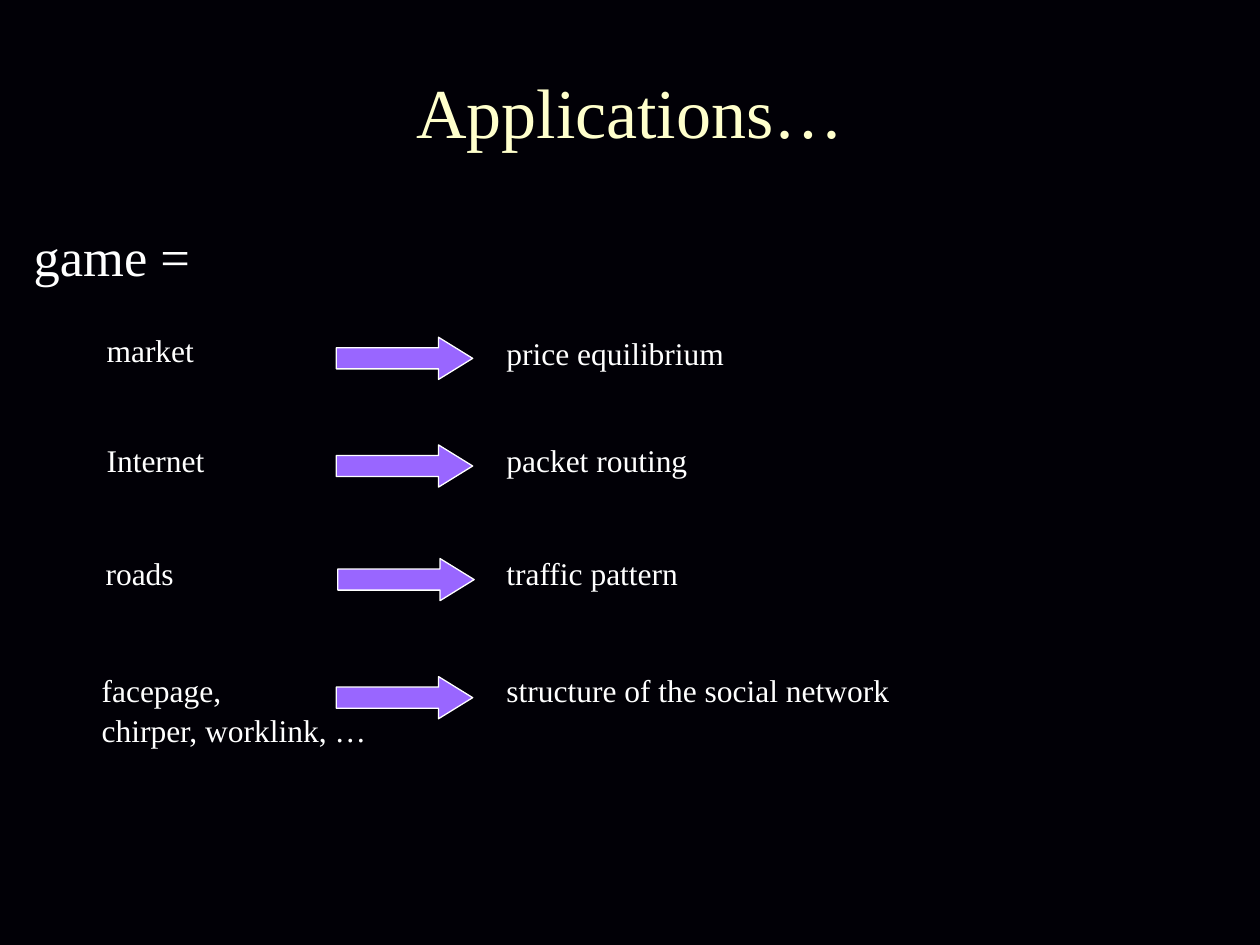
import pptx
import pptx.dml.color
import pptx.enum.shapes
import pptx.enum.text
import pptx.util

Cm = pptx.util.Cm
Pt = pptx.util.Pt
RGBColor = pptx.dml.color.RGBColor

BACKGROUND = RGBColor(0x01, 0x00, 0x06)
TITLE_COLOR = RGBColor(0xFF, 0xFF, 0xCC)
TEXT_COLOR = RGBColor(0xFF, 0xFF, 0xFF)
ARROW_COLOR = RGBColor(0x99, 0x66, 0xFF)
FONT_NAME = "Times New Roman"

APPLICATIONS = [
    {"top": 6.55, "label_left": 1.9, "label_size": (4.88, 1.8), "arrow": (6.78, 0.25),
     "label": ["market"], "outcome": "price equilibrium", "outcome_drop": 0.05, "outcome_width": 7.42},
    {"top": 8.76, "label_left": 1.9, "label_size": (4.65, 2.31), "arrow": (6.78, 0.21),
     "label": ["Internet"], "outcome": "packet routing", "outcome_drop": 0, "outcome_width": 13.13},
    {"top": 11.05, "label_left": 1.88, "label_size": (4.01, 1.8), "arrow": (6.81, 0.21),
     "label": ["roads"], "outcome": "traffic pattern", "outcome_drop": 0, "outcome_width": 15.44},
    {"top": 13.41, "label_left": 1.8, "label_size": (6.55, 2.57), "arrow": (6.78, 0.23),
     "label": ["facepage,", "chirper, worklink, …"], "outcome": "structure of the social network",
     "outcome_drop": 0, "outcome_width": 14.17},
]


def apply_format(target, values):
    for name, value in values.items():
        setattr(target, name, value)


def write_lines(text_frame, lines, size, color):
    text_frame.word_wrap = True
    text_frame.text = "\n".join(lines)
    for paragraph in text_frame.paragraphs:
        paragraph.space_after = Pt(1)
        apply_format(paragraph.font, {"name": FONT_NAME, "size": Pt(size)})
        paragraph.font.color.rgb = color


def add_text(slide, left, top, width, height, lines, size=18):
    textbox = slide.shapes.add_textbox(Cm(left), Cm(top), Cm(width), Cm(height))
    write_lines(textbox.text_frame, lines, size, TEXT_COLOR)


def add_title(slide, left, top, width, height):
    title = slide.shapes.title
    apply_format(title, {"left": Cm(left), "top": Cm(top), "width": Cm(width), "height": Cm(height)})
    write_lines(title.text_frame, ["Applications…"], 40, TITLE_COLOR)
    title.text_frame.vertical_anchor = pptx.enum.text.MSO_ANCHOR.MIDDLE
    title.text_frame.paragraphs[0].alignment = pptx.enum.text.PP_ALIGN.CENTER


def add_arrow(slide, left, top, width, height):
    arrow = slide.shapes.add_shape(
        pptx.enum.shapes.MSO_SHAPE.RIGHT_ARROW, Cm(left), Cm(top), Cm(width), Cm(height))
    arrow.adjustments[0] = 0.5
    arrow.adjustments[1] = 0.81
    arrow.shadow.inherit = False
    arrow.fill.solid()
    arrow.fill.fore_color.rgb = ARROW_COLOR
    arrow.line.color.rgb = TEXT_COLOR
    arrow.line.width = Pt(0.75)


def add_application(slide, row):
    top = row["top"]
    arrow_left, arrow_drop = row["arrow"]
    add_text(slide, row["label_left"], top, *row["label_size"], row["label"])
    add_arrow(slide, arrow_left, top + arrow_drop, 2.75, 0.85)
    add_text(slide, 9.96, top + row["outcome_drop"], row["outcome_width"], 1.8, [row["outcome"]])


def main():
    presentation = pptx.Presentation()
    apply_format(presentation, {"slide_width": Cm(25.4), "slide_height": Cm(19.05)})
    slide = presentation.slides.add_slide(presentation.slide_layouts.get_by_name("Title Only"))
    slide.background.fill.solid()
    slide.background.fill.fore_color.rgb = BACKGROUND
    add_title(slide, 0.84, 0.64, 23.72, 3.18)
    add_text(slide, 0.43, 4.39, 5.72, 1.52, ["game ="], 30)
    for row in APPLICATIONS:
        add_application(slide, row)
    presentation.save("out.pptx")


if __name__ == "__main__":
    main()
